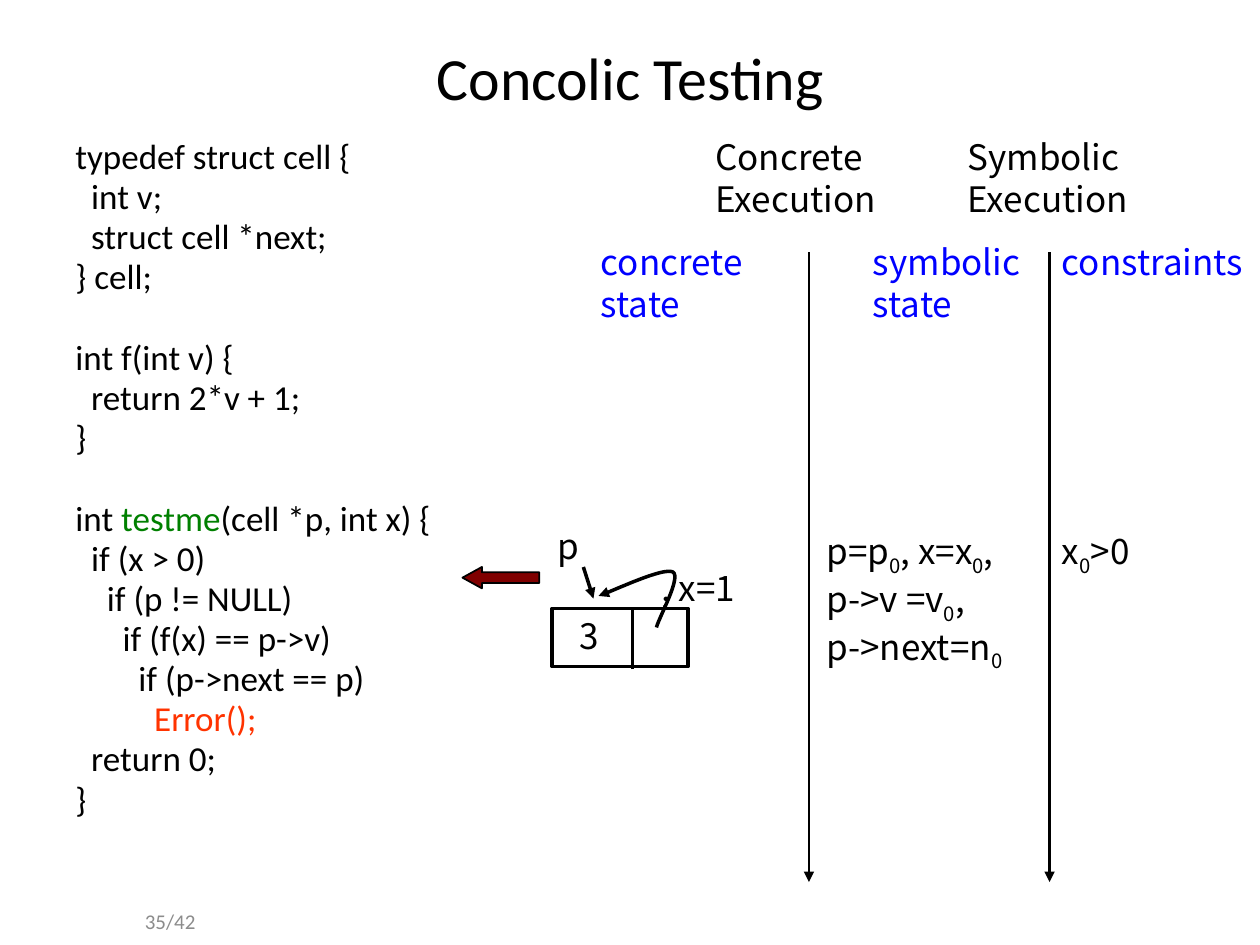
from lxml import etree
from pptx import Presentation
from pptx.dml.color import RGBColor
from pptx.enum.shapes import MSO_CONNECTOR, MSO_SHAPE
from pptx.enum.text import MSO_ANCHOR, PP_ALIGN
from pptx.oxml.ns import qn
from pptx.util import Inches, Pt

LEFT, CENTER, RIGHT = PP_ALIGN.LEFT, PP_ALIGN.CENTER, PP_ALIGN.RIGHT
TOP, MIDDLE = MSO_ANCHOR.TOP, MSO_ANCHOR.MIDDLE
STRAIGHT = MSO_CONNECTOR.STRAIGHT
RECT, LEFT_ARROW = MSO_SHAPE.RECTANGLE, MSO_SHAPE.LEFT_ARROW

BLACK, BLUE, GREEN, RED = "000000", "0000FF", "008000", "FF3300"
MAROON, GRAY = "800000", "8C8C8C"
CODE_FONT, NOTE_FONT = "Calibri", "Noto Sans CJK KR"
HANGING, CODE_STEP = 0.38, 0.125
CODE_GAP, BLOCK_GAP = 3.7, 26.9

CODE_BLOCKS = [
    [(0, [("typedef struct cell {", BLACK)]),
     (1, [("int v;", BLACK)]),
     (1, [("struct cell *next;", BLACK)]),
     (0, [("} cell;", BLACK)])],
    [(0, [("int f(int v) {", BLACK)]),
     (1, [("return 2*v + 1;", BLACK)]),
     (0, [("}", BLACK)])],
    [(0, [("int ", BLACK), ("testme", GREEN), ("(cell *p, int x) {", BLACK)]),
     (1, [("if (x > 0)", BLACK)]),
     (2, [("if (p != NULL)", BLACK)]),
     (3, [("if (f(x) == p->v)", BLACK)]),
     (4, [("if (p->next == p)", BLACK)]),
     (5, [("Error();", RED)]),
     (1, [("return 0;", BLACK)]),
     (0, [("}", BLACK)])],
]
# Subscripts are the parts between bars; each line is (indent, text).
NOTES = [
    ((5.58, 1.03, 1.67, 0.77), [(0, "Concrete Execution")], BLACK, 24),
    ((7.58, 1.03, 1.67, 0.77), [(0, "Symbolic Execution")], BLACK, 24),
    ((4.67, 1.86, 1.5, 0.77), [(0, "concrete state")], BLUE, 24),
    ((6.83, 1.86, 1.5, 0.77), [(0, "symbolic state")], BLUE, 24),
    ((8.33, 1.86, 1.67, 0.43), [(0, "constraints")], BLUE, 24),
    ((8.33, 4.15, 1.67, 0.43), [(0, "x|0|>0")], BLACK, 27.4),
    ((6.46, 4.15, 1.92, 1.1),
     [(0, "p=p|0|, x=x|0|,"), (0, "p->v =v|0|,"), (0, "p->next=n|0")], BLACK, 27.4),
    ((4.21, 4.11, 2.33, 0.77), [(0.12, "p"), (0.94, ", x=1")], BLACK, 24),
]
LINES = [
    ((6.42, 2), (6.42, 7), 1.5, True),
    ((8.33, 2), (8.33, 7), 1.5, True),
    ((4.63, 4.5), (4.71, 4.75), 2, True),
    ((5.02, 5.31), (5.02, 4.83), 2, False),
]
NEXT_CURVES = [
    [(5.21, 4.98), (5.23, 4.9), (5.41, 4.58), (5.34, 4.54)],
    [(5.34, 4.54), (5.26, 4.5), (4.87, 4.69), (4.75, 4.73)],
]


def rgb(color):
    """Turn a hex string into a colour."""
    return RGBColor.from_string(color)


def assign(obj, **values):
    """Set each named attribute on an object."""
    for name, value in values.items():
        setattr(obj, name, value)


def add_run(p, text, size, font, color):
    """Append a formatted run to a paragraph."""
    r = p.add_run()
    r.text = text
    assign(r.font, size=Pt(size), name=font)
    r.font.color.rgb = rgb(color)
    return r


def add_box(s, box, anchor=TOP):
    """Add a wrapping text box and return its text frame."""
    tf = s.shapes.add_textbox(*map(Inches, box)).text_frame
    assign(tf, word_wrap=True, vertical_anchor=anchor)
    return tf


def next_paragraph(tf, first):
    """Return the opening paragraph or a new one."""
    return tf.paragraphs[0] if first else tf.add_paragraph()


def set_indent(p, left, first=0):
    """Set the left margin and first-line indent in inches."""
    pPr = p._p.get_or_add_pPr()
    pPr.set("marL", str(Inches(left)))
    pPr.set("indent", str(Inches(first)))


def fill_notes(tf, lines, color, pitch):
    """Write lines whose parts alternate between normal and subscript."""
    for i, (indent, text) in enumerate(lines):
        p = next_paragraph(tf, i == 0)
        assign(p, alignment=LEFT, line_spacing=Pt(pitch))
        set_indent(p, indent)
        for j, part in enumerate(text.split("|")):
            r = add_run(p, part, 20, NOTE_FONT, color)
            if j % 2:
                r._r.get_or_add_rPr().set("baseline", "-25000")


def style_line(shape, width, arrow=False):
    """Draw a black outline, with an arrowhead at its end if asked."""
    shape.line.color.rgb = rgb(BLACK)
    shape.line.width = Pt(width)
    if arrow:
        etree.SubElement(shape.line._get_or_add_ln(), qn("a:tailEnd"), type="triangle")


def bezier(points, steps=16):
    """Return points along a cubic curve, after its start."""
    result = []
    for i in range(1, steps + 1):
        t = i / steps
        weights = ((1 - t) ** 3, 3 * t * (1 - t) ** 2, 3 * t * t * (1 - t), t ** 3)
        result.append(tuple(Inches(sum(w * pt[k] for w, pt in zip(weights, points)))
                            for k in (0, 1)))
    return result


def add_code(s):
    """Write the program listing, with a gap between its blocks."""
    tf = add_box(s, (0.5, 1.08, 4.42, 5.83))
    for b, block in enumerate(CODE_BLOCKS):
        for i, (level, runs) in enumerate(block):
            p = next_paragraph(tf, b == i == 0)
            gap = BLOCK_GAP if b and i == 0 else CODE_GAP
            assign(p, line_spacing=0.8, space_before=Pt(gap))
            set_indent(p, HANGING + level * CODE_STEP, -HANGING)
            for text, color in runs:
                add_run(p, text, 20, CODE_FONT, color)


def add_diagram(s):
    """Draw the time lines, the memory cell and its pointers."""
    arrow = s.shapes.add_shape(LEFT_ARROW, *map(Inches, (3.67, 4.5, 0.61, 0.17)))
    arrow.adjustments[0], arrow.adjustments[1] = 0.5, 0.91
    arrow.shadow.inherit = False
    arrow.fill.solid()
    arrow.fill.fore_color.rgb = rgb(MAROON)
    style_line(arrow, 1)

    cell = s.shapes.add_shape(RECT, *map(Inches, (4.38, 4.83, 1.08, 0.46)))
    cell.shadow.inherit = False
    cell.fill.background()
    style_line(cell, 2)
    cell.text_frame.vertical_anchor = TOP
    fill_notes(cell.text_frame, [(0.12, "3")], BLACK, 24)

    for start, end, width, head in LINES:
        line = s.shapes.add_connector(STRAIGHT, *map(Inches, start + end))
        style_line(line, width, head)
        etree.SubElement(line._element.spPr, qn("a:effectLst"))

    builder = s.shapes.build_freeform(*map(Inches, NEXT_CURVES[0][0]))
    for curve in NEXT_CURVES:
        builder.add_line_segments(bezier(curve), close=False)
    pointer = builder.convert_to_shape()
    pointer.shadow.inherit = False
    pointer.fill.background()
    style_line(pointer, 2, True)


def main():
    """Build the slide and save it."""
    prs = Presentation()
    assign(prs, slide_width=Inches(10), slide_height=Inches(7.5))
    s = prs.slides.add_slide(prs.slide_layouts[5])
    title = s.shapes.title
    assign(title, left=Inches(0.5), top=Inches(0.3), width=Inches(9), height=Inches(0.61))
    title.text_frame.vertical_anchor = MIDDLE
    p = title.text_frame.paragraphs[0]
    p.alignment = CENTER
    add_run(p, "Concolic Testing", 34.2, CODE_FONT, BLACK)

    p = add_box(s, (0.67, 7.11, 0.98, 0.4), MIDDLE).paragraphs[0]
    p.alignment = RIGHT
    add_run(p, "35/42", 12, CODE_FONT, GRAY)

    add_code(s)
    add_diagram(s)
    for box, lines, color, pitch in NOTES:
        fill_notes(add_box(s, box), lines, color, pitch)
    prs.save("out.pptx")


if __name__ == "__main__":
    main()
